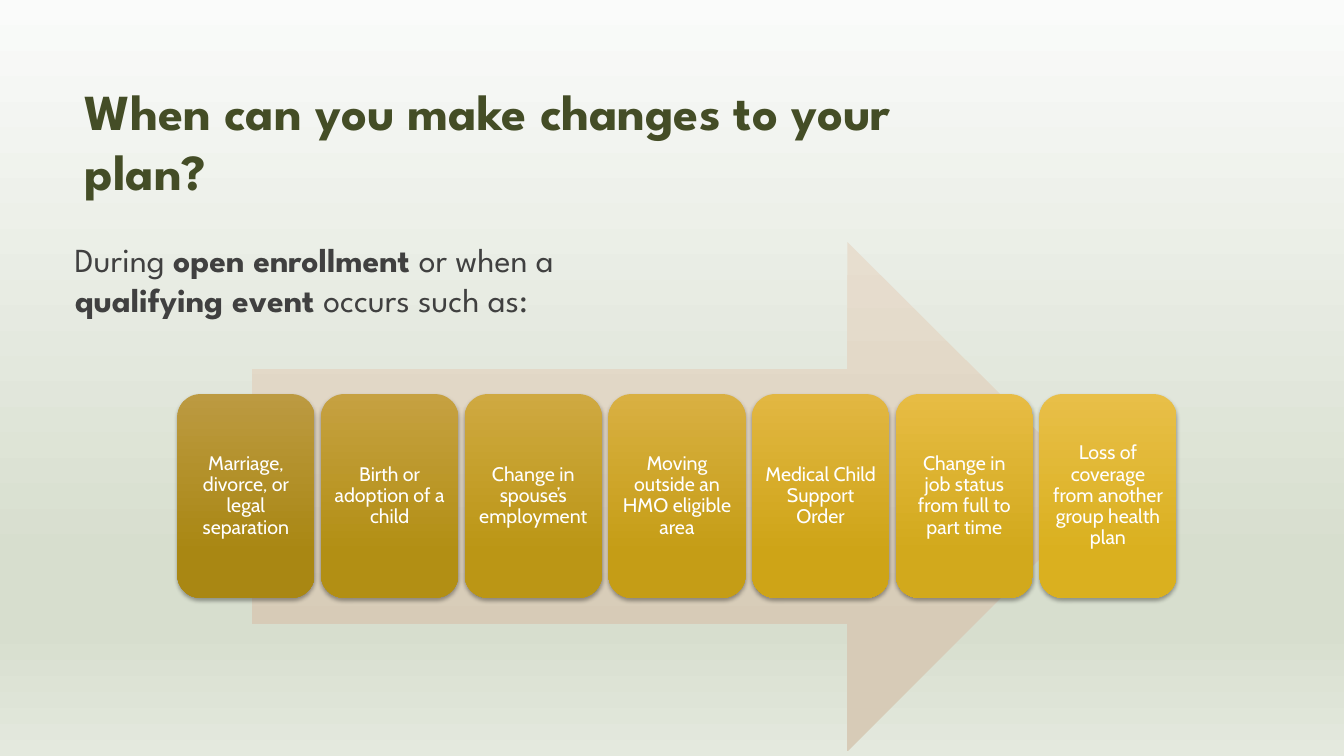
from dataclasses import dataclass

from lxml import etree
from pptx import Presentation
from pptx.dml.color import RGBColor
from pptx.enum import shapes, text
from pptx.oxml.ns import qn
from pptx.util import Inches, Pt


@dataclass(frozen=True)
class Theme:
    heading_font: str = "League Spartan"
    card_font: str = "Cabin"
    title_color: str = "444D26"
    body_color: str = "404040"
    card_text: str = "FFFFFF"
    shadow: str = "000000"
    title_size: int = 36
    body_size: int = 24
    card_size: int = 14
    background: tuple = ((0, "FAFBFA"), (74, "D7DECE"), (83, "D7DECE"), (100, "E4E9DE"))
    arrow: tuple = ((0, "E7DECF"), (78, "D7CBB7"))


@dataclass(frozen=True)
class EventCard:
    label: str
    top_color: str
    bottom_color: str


THEME = Theme()
EVENTS = [
    EventCard("Marriage, divorce, or legal separation", "BC9A41", "A98713"),
    EventCard("Birth or adoption of a child", "C6A141", "B28F14"),
    EventCard("Change in spouse’s employment", "CFA941", "BB9615"),
    EventCard("Moving outside an HMO eligible area", "D9B042", "C59D16"),
    EventCard("Medical Child Support Order", "E2B742", "CEA417"),
    EventCard("Change in job status from full to part time", "E7BC44", "D2A91C"),
    EventCard("Loss of coverage from another group health plan", "E8BF48", "DAB01F"),
]
INTRO = [
    ("During ", False),
    ("open enrollment ", True),
    ("or when a ", False),
    ("qualifying event ", True),
    ("occurs such as:", False),
]
CARD_LEFT, CARD_TOP, CARD_PITCH = 1.76, 3.91, 1.425
CARD_WIDTH, CARD_HEIGHT = 1.36, 2.02


def paint_gradient(owner, fill, stops: tuple) -> None:
    """Fill from top to bottom with (percent, colour) stops."""
    fill.gradient()
    fill.gradient_angle = 270
    stop_list = owner.element.find(".//" + qn("a:gsLst"))
    for old_stop in list(stop_list):
        stop_list.remove(old_stop)
    for percent, color in stops:
        stop = etree.SubElement(stop_list, qn("a:gs"), pos=str(percent * 1000))
        etree.SubElement(stop, qn("a:srgbClr"), val=color)


def add_soft_shadow(shape) -> None:
    effects = shape.element.spPr.find(qn("a:effectLst"))
    shadow = etree.SubElement(
        effects, qn("a:outerShdw"), blurRad=str(Pt(3)), dist=str(Pt(2)),
        dir="5400000", algn="ctr", rotWithShape="0")
    color = etree.SubElement(shadow, qn("a:srgbClr"), val=THEME.shadow)
    etree.SubElement(color, qn("a:alpha"), val="35000")


def add_span(para, words: str, font: str, size: int, color: str, bold: bool = False) -> None:
    span = para.add_run()
    span.text = words
    span.font.name = font
    span.font.size = Pt(size)
    span.font.bold = bold
    span.font.color.rgb = RGBColor.from_string(color)


def place(box, left: float, top: float, width: float, height: float) -> None:
    box.left, box.top = Inches(left), Inches(top)
    box.width, box.height = Inches(width), Inches(height)


def add_plain_shape(page, kind, left: float, top: float, width: float, height: float,
                    stops: tuple):
    shape = page.shapes.add_shape(
        kind, Inches(left), Inches(top), Inches(width), Inches(height))
    shape.shadow.inherit = False
    shape.line.fill.background()
    paint_gradient(shape, shape.fill, stops)
    return shape


def add_card(page, event: EventCard, left: float) -> None:
    card = add_plain_shape(
        page, shapes.MSO_SHAPE.ROUNDED_RECTANGLE, left, CARD_TOP, CARD_WIDTH,
        CARD_HEIGHT, ((0, event.top_color), (78, event.bottom_color)))
    add_soft_shadow(card)
    frame = card.text_frame
    frame.word_wrap = True
    frame.vertical_anchor = text.MSO_ANCHOR.MIDDLE
    frame.margin_left = frame.margin_right = Inches(0.06)
    frame.margin_top = frame.margin_bottom = Inches(0.06)
    para = frame.paragraphs[0]
    para.alignment = text.PP_ALIGN.CENTER
    para.line_spacing = 0.9
    add_span(para, event.label, THEME.card_font, THEME.card_size, THEME.card_text)


def add_title(page) -> None:
    title = page.shapes.title
    place(title, 0.74, 0.67, 9.4, 1.44)
    frame = title.text_frame
    frame.auto_size = text.MSO_AUTO_SIZE.NONE
    frame.vertical_anchor = text.MSO_ANCHOR.MIDDLE
    para = frame.paragraphs[0]
    para.alignment = text.PP_ALIGN.LEFT
    add_span(para, "When can you make changes to your plan?", THEME.heading_font,
             THEME.title_size, THEME.title_color, True)


def add_intro(page) -> None:
    body = page.placeholders[1]
    place(body, 0.64, 2.32, 6.03, 4.09)
    frame = body.text_frame
    frame.auto_size = text.MSO_AUTO_SIZE.NONE
    para = frame.paragraphs[0]
    para.space_before = Pt(0)
    properties = para._p.get_or_add_pPr()
    properties.set("marL", "0")
    properties.set("indent", "0")
    etree.SubElement(properties, qn("a:buNone"))
    for words, bold in INTRO:
        add_span(para, words, THEME.heading_font, THEME.body_size, THEME.body_color, bold)


def main() -> None:
    deck = Presentation()
    deck.slide_width, deck.slide_height = Inches(13.33), Inches(7.5)
    page = deck.slides.add_slide(deck.slide_layouts[1])
    paint_gradient(page, page.background.fill, THEME.background)

    # Heading and introduction
    add_title(page)
    add_intro(page)

    # Arrow behind the row of qualifying events
    add_plain_shape(page, shapes.MSO_SHAPE.RIGHT_ARROW, 2.5, 2.4, 8.43, 5.05, THEME.arrow)
    for index, event in enumerate(EVENTS):
        add_card(page, event, CARD_LEFT + index * CARD_PITCH)

    deck.save("out.pptx")


if __name__ == "__main__":
    main()
